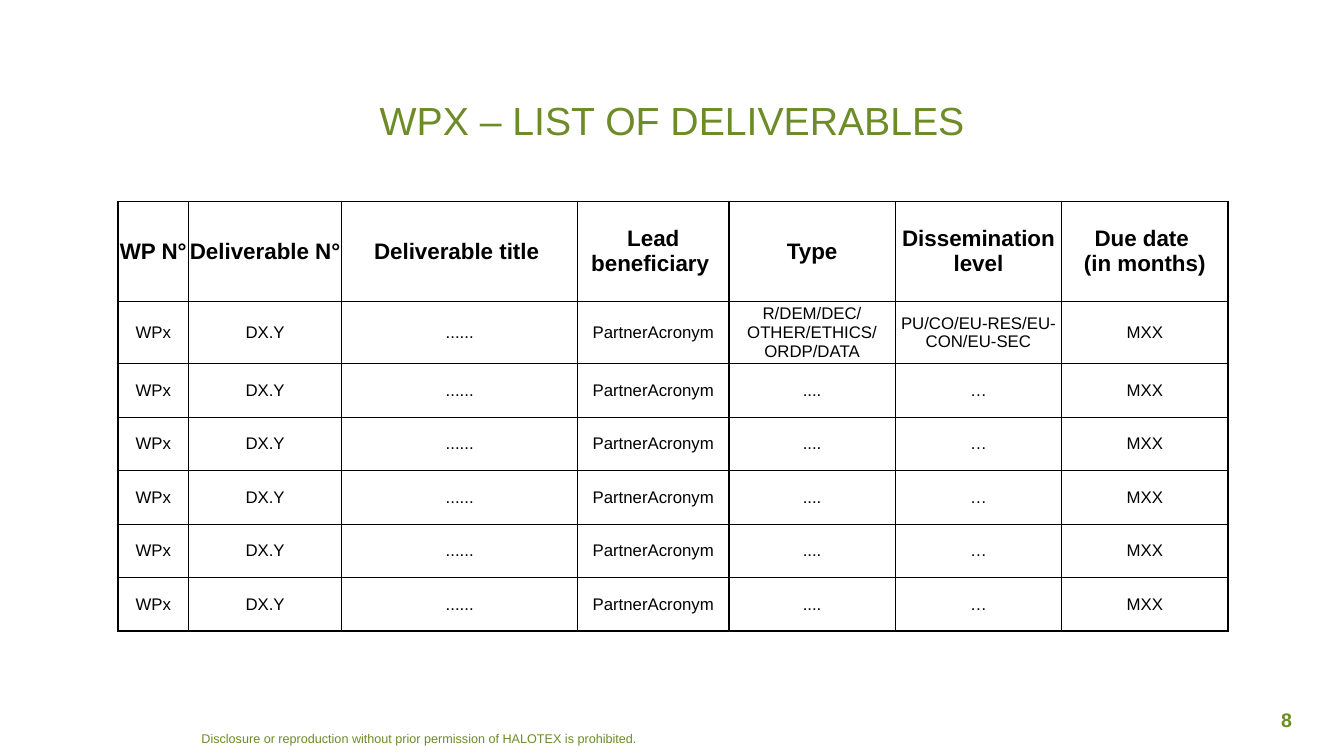
"""Build the slide that lists the deliverables of a work package."""
import dataclasses

import pptx
import pptx.dml.color
import pptx.enum.text
import pptx.oxml
import pptx.oxml.ns
import pptx.util

Inches = pptx.util.Inches
Pt = pptx.util.Pt
ALIGN = pptx.enum.text.PP_ALIGN


@dataclasses.dataclass(frozen=True)
class Theme:
    font: str = "Arial"
    green: str = "6D8C28"
    black: str = "000000"
    title: int = 28
    header: int = 16
    number: int = 14
    body: int = 12
    footer: int = 9
    border: int = 1


class DeliverablesPage:
    def __init__(self, deck, theme):
        self.theme = theme
        self.page = deck.slides.add_slide(deck.slide_layouts[6])

    def style(self, para, size, color, align, bold=False):
        para.alignment = align
        para.font.name = self.theme.font
        para.font.size = Pt(size)
        para.font.bold = bold
        para.font.color.rgb = pptx.dml.color.RGBColor.from_string(color)

    def text(self, place, words, size, align=ALIGN.CENTER, bold=False, spacing=None):
        box = self.page.shapes.add_textbox(*map(Inches, place))
        box.text_frame.word_wrap = True
        para = box.text_frame.paragraphs[0]
        para.text = words
        para.line_spacing = spacing
        self.style(para, size, self.theme.green, align, bold)

    def outline(self, cell):
        properties = cell._tc.get_or_add_tcPr()
        for index, side in enumerate("LRTB"):
            properties.insert(index, pptx.oxml.parse_xml(
                f'<a:ln{side} {pptx.oxml.ns.nsdecls("a")} w="{Pt(self.theme.border)}">'
                f'<a:solidFill><a:srgbClr val="{self.theme.black}"/></a:solidFill>'
                f'</a:ln{side}>'))

    def cell(self, cell, words, size, bold):
        cell.text = words
        cell.vertical_anchor = pptx.enum.text.MSO_ANCHOR.MIDDLE
        cell.margin_left = cell.margin_right = Inches(0.01)
        cell.margin_top = cell.margin_bottom = Inches(0.01)
        cell.fill.background()
        self.outline(cell)
        for para in cell.text_frame.paragraphs:
            self.style(para, size, self.theme.black, ALIGN.CENTER, bold)

    def table(self, left, top, widths, heights, rows):
        frame = self.page.shapes.add_table(
            len(rows), len(widths), Inches(left), Inches(top),
            Inches(sum(widths)), Inches(sum(heights)))
        table = frame.table
        table.first_row = table.horz_banding = False
        for column, width in zip(table.columns, widths):
            column.width = Inches(width)
        for index, (row, height, entries) in enumerate(zip(table.rows, heights, rows)):
            row.height = Inches(height)
            is_header = index == 0
            size = self.theme.header if is_header else self.theme.body
            for cell, words in zip(row.cells, entries):
                self.cell(cell, words, size, is_header)


def main():
    deck = pptx.Presentation()
    deck.slide_width = Inches(13.33)
    deck.slide_height = Inches(7.5)
    theme = Theme()
    page = DeliverablesPage(deck, theme)

    page.text((0.97, 0.96, 11.39, 0.69), "WPX – LIST OF DELIVERABLES",
              theme.title, spacing=0.9)

    headers = ["WP N°", "Deliverable N°", "Deliverable title ", "Lead beneficiary ",
               "Type", "Dissemination level", "Due date \n(in months)"]
    choices = [("R/DEM/DEC/OTHER/ETHICS/ORDP/DATA", "PU/CO/EU-RES/EU-CON/EU-SEC")]
    choices += [("....", "…")] * 5
    deliverables = [["WPx", "DX.Y", "......", "PartnerAcronym", kind, level, "MXX"]
                    for kind, level in choices]
    page.table(1.17, 2, [0.7, 1.52, 2.34, 1.5] + [1.65] * 3,
               [0.99] + [0.53] * len(deliverables), [headers] + deliverables)

    page.text((1.9, 7.2, 5.17, 0.3),
              "Disclosure or reproduction without prior permission of HALOTEX is prohibited.",
              theme.footer, ALIGN.LEFT)
    page.text((12.38, 6.97, 0.76, 0.4), "8", theme.number, bold=True)
    deck.save("out.pptx")


if __name__ == "__main__":
    main()
